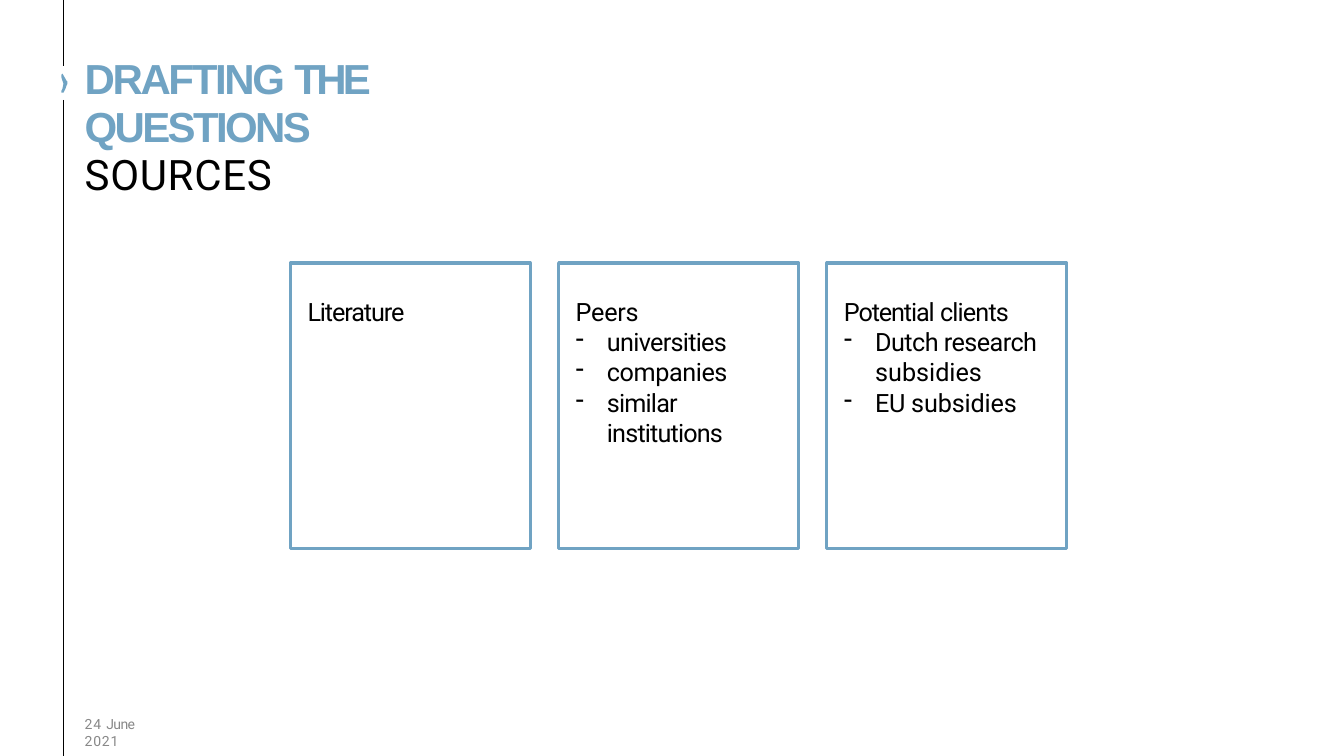
from lxml import etree
from pptx import Presentation
from pptx.dml.color import RGBColor
from pptx.enum.shapes import MSO_CONNECTOR, MSO_SHAPE
from pptx.enum.text import MSO_ANCHOR, MSO_AUTO_SIZE, PP_ALIGN
from pptx.oxml.ns import qn
from pptx.util import Inches, Pt

BLUE = RGBColor(0x70, 0xA3, 0xC3)
BLACK = RGBColor(0x00, 0x00, 0x00)
GREY = RGBColor(0x88, 0x88, 0x88)

WIDTH, HEIGHT = 13.33, 7.5
RULE_X, TEXT_X = 0.63, 0.84
CARD_W, CARD_H, CARD_GAP = 2.38, 2.83, 0.28
CARD_PAD, HANG = 0.17, 0.31

HEADING = dict(name="Arial", size=Pt(30), bold=True)
SUBHEADING = dict(name="Roboto", size=Pt(30), bold=False)
CARD_TEXT = dict(name="Roboto", size=Pt(18), bold=False)
DATE_TEXT = dict(name="Roboto", size=Pt(10), bold=False)

# Each card line: whether it has a dash, its indent, and (text, letter spacing) runs
PLAIN, DASH, CONTINUED = (False, 0), (True, HANG), (False, HANG)
CARDS = [
    [(PLAIN, [("Literature", -0.8)])],
    [(PLAIN, [("Peers", -0.2)]),
     (DASH, [("universities", -0.5)]),
     (DASH, [("companies", -0.3)]),
     (DASH, [("similar", -0.6)]),
     (CONTINUED, [("institutions", -0.6)])],
    [(PLAIN, [("Potential ", -0.8), ("clients", -0.6)]),
     (DASH, [("Dutch research ", -0.4), ("subsidies", 0)]),
     (DASH, [("EU ", -0.3), ("subsidies", -0.1)])],
]


def add_runs(p, runs, font, color):
    """Add (text, letter spacing in points) runs in one font."""
    p.alignment = PP_ALIGN.LEFT
    for text, spacing in runs:
        r = p.add_run()
        r.text = text
        for name, value in font.items():
            setattr(r.font, name, value)
        r.font.color.rgb = color
        r._r.get_or_add_rPr().set("spc", str(round(spacing * 100)))


def set_frame(tf, top=0.0):
    frame = dict(margin_left=0, margin_right=0, margin_bottom=0, margin_top=Inches(top),
                 word_wrap=True, auto_size=MSO_AUTO_SIZE.NONE, vertical_anchor=MSO_ANCHOR.TOP)
    for name, value in frame.items():
        setattr(tf, name, value)


def set_indent(p, dash, indent):
    pPr = p._p.get_or_add_pPr()
    pPr.set("marL", str(Inches(CARD_PAD + indent)))
    pPr.set("indent", str(-Inches(HANG) if dash else 0))
    if dash:
        etree.SubElement(pPr, qn("a:buChar")).set("char", "-")
    else:
        etree.SubElement(pPr, qn("a:buNone"))


def add_side_rule(slide, x, gap_top, gap_bottom):
    """Draw the vertical rule, broken by the small bracket mark."""
    for start, end in ((0, gap_top), (gap_bottom, HEIGHT)):
        line = slide.shapes.add_connector(
            MSO_CONNECTOR.STRAIGHT, Inches(x), Inches(start), Inches(x), Inches(end))
        line.line.color.rgb = BLACK
        line.line.width = Pt(0.57)
        etree.SubElement(line._element.spPr, qn("a:effectLst"))

    top = gap_top + 0.08
    outline = [(-0.01, 0), (-0.02, 0.01), (-0.02, 0.04), (0, 0.1), (-0.01, 0.15),
               (-0.02, 0.17), (-0.02, 0.19), (0, 0.19), (0.02, 0.15), (0.03, 0.12),
               (0.04, 0.1), (0.04, 0.08), (0.03, 0.07)]
    points = [(Inches(x + dx), Inches(top + dy)) for dx, dy in outline]
    builder = slide.shapes.build_freeform(*points[0])
    builder.add_line_segments(points[1:], close=True)
    bracket = builder.convert_to_shape()
    bracket.shadow.inherit = False
    bracket.fill.solid()
    bracket.fill.fore_color.rgb = BLUE
    bracket.line.fill.background()


def fill_title(title, x, y, w, h):
    title.left, title.top, title.width, title.height = map(Inches, (x, y, w, h))
    tf = title.text_frame
    set_frame(tf, 0.01)
    add_runs(tf.paragraphs[0], [("DRAFTING ", -1.7), ("THE ", -2.6), ("QUESTIONS", -1.9)],
             HEADING, BLUE)
    add_runs(tf.add_paragraph(), [("SOURCES", 0.5)], SUBHEADING, BLACK)
    for p in tf.paragraphs:
        p.line_spacing = Pt(34.1)
        p.space_before = Pt(0)


def add_date(slide, x, y, w, h):
    box = slide.shapes.add_textbox(*map(Inches, (x, y, w, h)))
    set_frame(box.text_frame)
    add_runs(box.text_frame.paragraphs[0], [("24 ", 0.6), ("June ", -0.4), ("2021", 0.6)],
             DATE_TEXT, GREY)


def add_card(slide, x, y, w, h, lines):
    card = slide.shapes.add_shape(MSO_SHAPE.RECTANGLE, *map(Inches, (x, y, w, h)))
    card.shadow.inherit = False
    card.fill.background()
    card.line.color.rgb = BLUE
    card.line.width = Pt(2.25)
    tf = card.text_frame
    set_frame(tf, 0.33)
    for i, ((dash, indent), runs) in enumerate(lines):
        p = tf.add_paragraph() if i else tf.paragraphs[0]
        set_indent(p, dash, indent)
        add_runs(p, runs, CARD_TEXT, BLACK)


def add_cards(slide, x, y):
    for i, lines in enumerate(CARDS):
        add_card(slide, x + i * (CARD_W + CARD_GAP), y, CARD_W, CARD_H, lines)


def main():
    prs = Presentation()
    prs.slide_width, prs.slide_height = Inches(WIDTH), Inches(HEIGHT)
    slide = prs.slides.add_slide(prs.slide_layouts.get_by_name("Title Only"))
    add_side_rule(slide, RULE_X, 0.65, 0.99)
    fill_title(slide.shapes.title, TEXT_X, 0.54, 5.1, 0.98)
    add_date(slide, TEXT_X, 7.1, 0.86, 0.18)
    add_cards(slide, 2.88, 2.61)
    prs.save("out.pptx")


if __name__ == "__main__":
    main()
